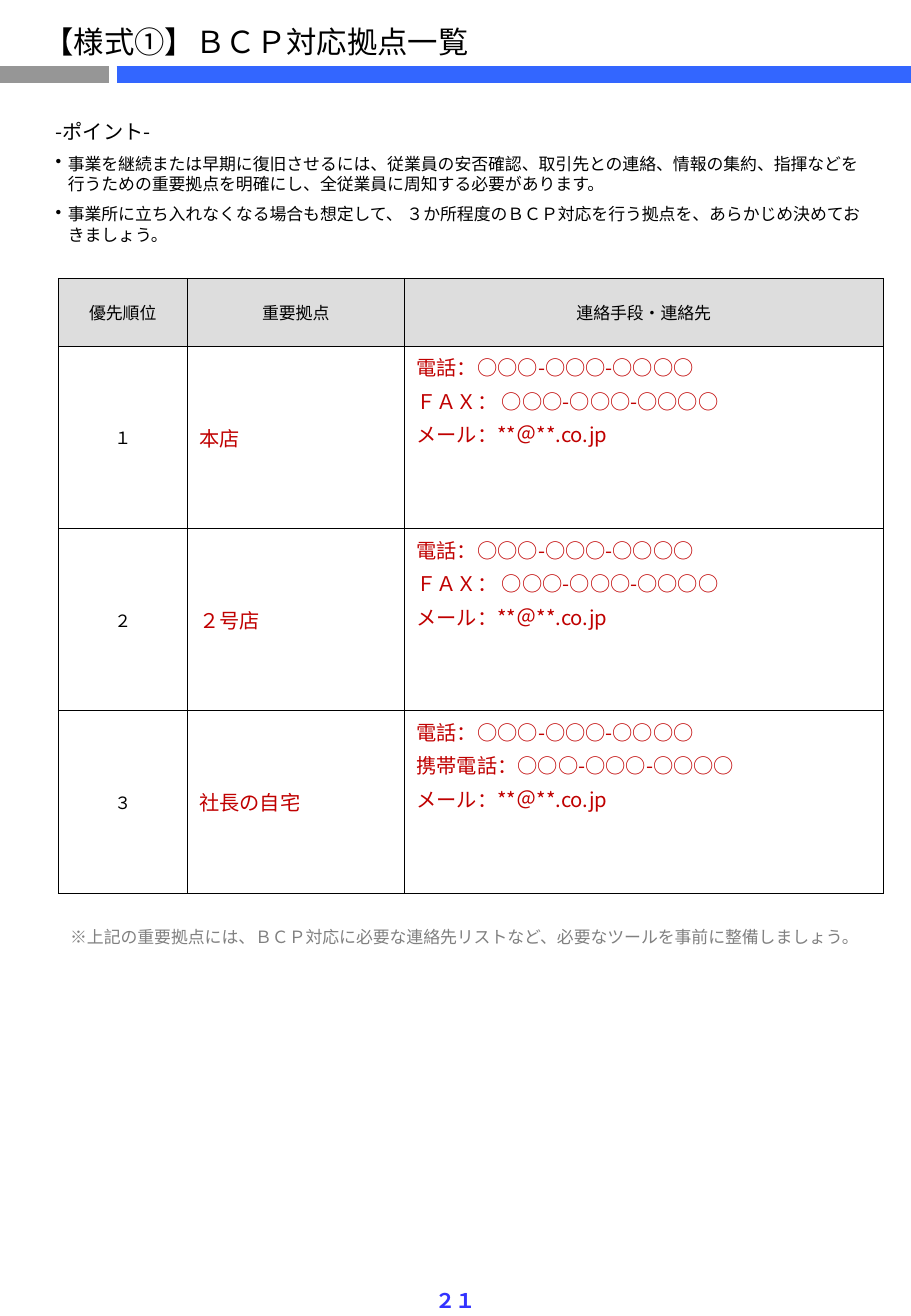
from lxml.etree import SubElement
from pptx import Presentation
from pptx.dml.color import RGBColor
from pptx.enum.shapes import MSO_CONNECTOR
from pptx.enum.text import MSO_ANCHOR, PP_ALIGN
from pptx.oxml import parse_xml
from pptx.oxml.ns import nsdecls, qn
from pptx.util import Pt

PX = 9144  # 100 px to the inch
FONT = "Noto Sans CJK JP"
BLACK, RED, GRAY, BLUE = "000000", "C00000", "808080", "3333FF"


def color(value):
    return RGBColor.from_string(value)


def write(frame, lines, size, ink=BLACK, bold=False, **paragraph_format):
    for index, line in enumerate(lines):
        paragraph = frame.paragraphs[0] if index == 0 else frame.add_paragraph()
        for name, value in paragraph_format.items():
            setattr(paragraph, name, value)
        run = paragraph.add_run()
        run.text = line
        for name, value in {"size": Pt(size), "bold": bold, "name": FONT}.items():
            setattr(run.font, name, value)
        run.font.color.rgb = color(ink)
        SubElement(run.font._element, qn("a:ea"), typeface=FONT)


presentation = Presentation()
presentation.slide_width, presentation.slide_height = 750 * PX, 1083 * PX
slide = presentation.slides.add_slide(presentation.slide_layouts[6])

# Two-colour rule under the title
for left, right, ink in [(0, 90, "969696"), (96, 750, "3366FF")]:
    rule = slide.shapes.add_connector(
        MSO_CONNECTOR.STRAIGHT, left * PX, 61 * PX, right * PX, 61 * PX)
    rule.line.color.rgb = color(ink)
    rule.line.width = Pt(10)
    SubElement(rule._element.spPr, qn("a:effectLst"))

# Title, points, note and page number
points = [
    "-ポイント-",
    "事業を継続または早期に復旧させるには、従業員の安否確認、取引先との連絡、情報の集約、指揮などを行うための重要拠点を明確にし、全従業員に周知する必要があります。",
    "事業所に立ち入れなくなる場合も想定して、 ３か所程度のＢＣＰ対応を行う拠点を、あらかじめ決めておきましょう。",
]
note = "※上記の重要拠点には、ＢＣＰ対応に必要な連絡先リストなど、必要なツールを事前に整備しましょう。"
text_boxes = [
    ((26, 14, 374, 40), False, ["【様式①】ＢＣＰ対応拠点一覧"], {"size": 18}),
    ((36, 93, 689, 114), True, points, {"size": 10, "space_after": Pt(6)}),
    ((48, 758, 677, 27), True, [note], {"size": 10, "ink": GRAY}),
    ((348, 1055, 54, 31), False, ["２１"],
     {"size": 12, "ink": BLUE, "bold": True, "alignment": PP_ALIGN.CENTER}),
]
for box, wrap, lines, text_format in text_boxes:
    frame = slide.shapes.add_textbox(*(length * PX for length in box)).text_frame
    frame.word_wrap = wrap
    write(frame, lines, **text_format)
    if lines is points:
        frame.paragraphs[0].runs[0].font.size = Pt(12)
        for index, paragraph in enumerate(frame.paragraphs):
            properties = paragraph._p.get_or_add_pPr()
            properties.set("marL", str(10 * PX))
            properties.set("indent", str(-10 * PX))
            if index:
                SubElement(properties, qn("a:buChar"), char="•")

# Table of sites
phone, fax = "電話：○○○-○○○-○○○○", "ＦＡＸ： ○○○-○○○-○○○○"
mobile, mail = "携帯電話：○○○-○○○-○○○○", "メール：**＠**.co.jp"
rows = [
    (["優先順位"], ["重要拠点"], ["連絡手段・連絡先"]),
    (["１"], ["本店"], [phone, fax, mail]),
    (["２"], ["２号店"], [phone, fax, mail]),
    (["３"], ["社長の自宅"], [phone, mobile, mail]),
]
column_widths, row_heights = [106, 179, 394], [56, 150, 150, 150]
table = slide.shapes.add_table(
    len(rows), len(column_widths), 48 * PX, 229 * PX,
    sum(column_widths) * PX, sum(row_heights) * PX).table
table.first_row = table.horz_banding = False
for column, width in zip(table.columns, column_widths):
    column.width = width * PX
for row, height in zip(table.rows, row_heights):
    row.height = height * PX

for row_index, row in enumerate(rows):
    for column_index, lines in enumerate(row):
        cell = table.cell(row_index, column_index)
        is_header = row_index == 0
        is_label = is_header or column_index == 0
        is_contact = column_index == 2 and not is_header
        cell.vertical_anchor = MSO_ANCHOR.TOP if is_contact else MSO_ANCHOR.MIDDLE
        size = 10 if is_label else 12
        write(cell.text_frame, lines, size, BLACK if is_label else RED,
              alignment=PP_ALIGN.CENTER if is_label else PP_ALIGN.LEFT,
              space_before=Pt(size * 0.2))
        properties = cell._tc.get_or_add_tcPr()
        for side in ("lnL", "lnR", "lnT", "lnB"):
            properties.append(parse_xml(
                f'<a:{side} {nsdecls("a")} w="{Pt(0.5)}"><a:solidFill>'
                f'<a:srgbClr val="{BLACK}"/></a:solidFill></a:{side}>'))
        if is_header:
            cell.fill.solid()
            cell.fill.fore_color.rgb = color("DDDDDD")
        else:
            cell.fill.background()

presentation.save("out.pptx")
